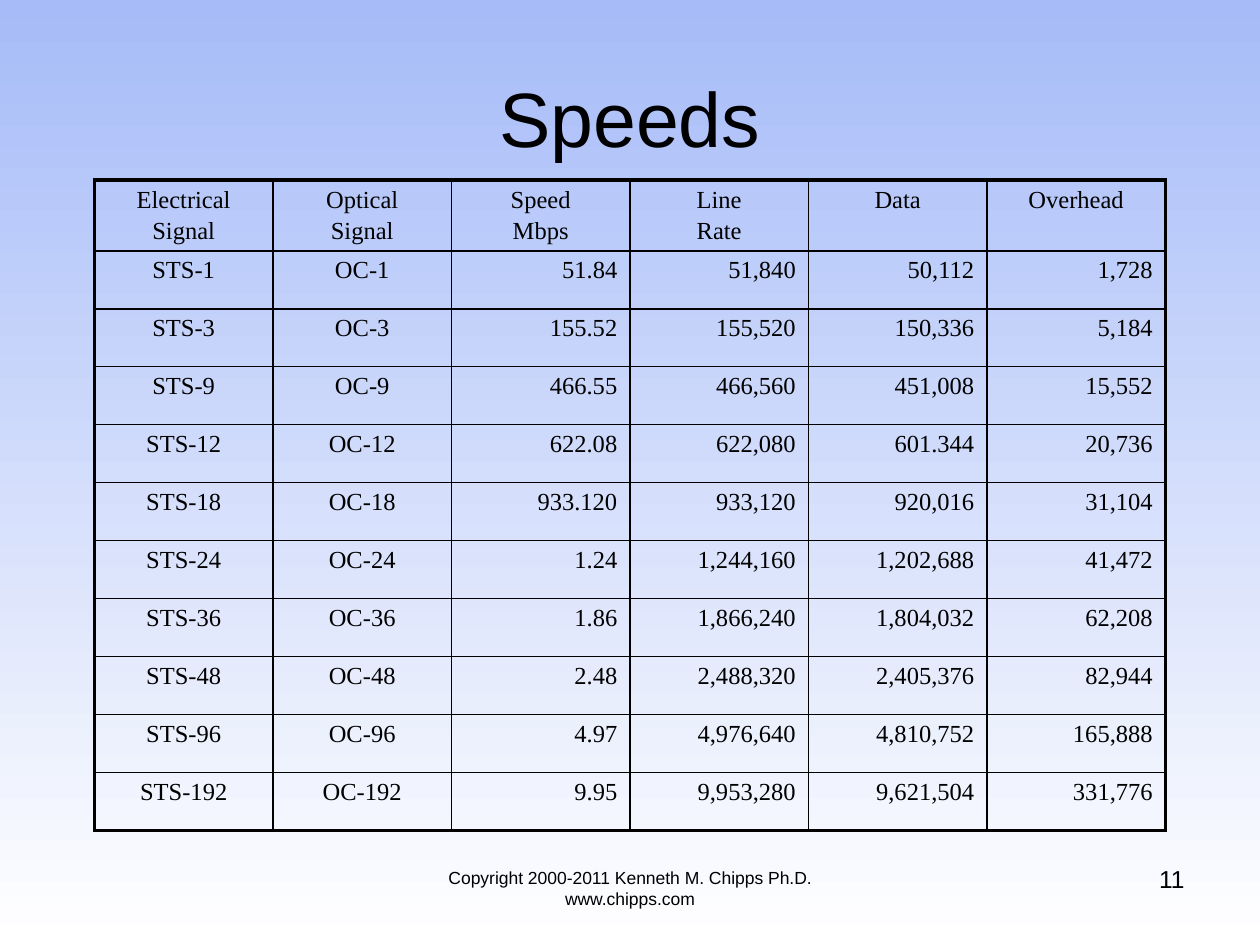
from dataclasses import dataclass

from lxml import etree
from pptx import Presentation
from pptx.dml.color import RGBColor
from pptx.enum import text
from pptx.oxml.ns import qn
from pptx.util import Inches, Pt

CENTER, RIGHT = text.PP_ALIGN.CENTER, text.PP_ALIGN.RIGHT


@dataclass(frozen=True)
class Theme:
    ink: str = "000000"
    sky: str = "A6BBF8"
    white: str = "FFFFFF"
    sans: str = "Arial"
    serif: str = "Times New Roman"
    title: float = 44
    body: float = 14
    footer: float = 10
    cell_gap: float = 2.2
    outer_line: float = 2.25
    inner_line: float = 1


@dataclass(frozen=True)
class Label:
    words: str
    left: float
    top: float
    width: float
    height: float
    size: float
    align: text.PP_ALIGN
    anchor: text.MSO_ANCHOR = text.MSO_ANCHOR.TOP


THEME = Theme()

LABELS = [
    Label("Speeds", 0.5, 0.3, 9, 1.25, THEME.title, CENTER, text.MSO_ANCHOR.MIDDLE),
    Label("Copyright 2000-2011 Kenneth M. Chipps Ph.D. www.chipps.com",
          3, 6.83, 4, 0.52, THEME.footer, CENTER),
    Label("11", 7.17, 6.81, 2.33, 0.52, THEME.body, RIGHT),
]

HEADERS = ["Electrical\nSignal", "Optical\nSignal", "Speed\nMbps",
           "Line\nRate", "Data", "Overhead"]

# Signal level, speed, line rate, data, overhead
SPEEDS = [
    (1, "51.84", "51,840", "50,112", "1,728"),
    (3, "155.52", "155,520", "150,336", "5,184"),
    (9, "466.55", "466,560", "451,008", "15,552"),
    (12, "622.08", "622,080", "601.344", "20,736"),
    (18, "933.120", "933,120", "920,016", "31,104"),
    (24, "1.24", "1,244,160", "1,202,688", "41,472"),
    (36, "1.86", "1,866,240", "1,804,032", "62,208"),
    (48, "2.48", "2,488,320", "2,405,376", "82,944"),
    (96, "4.97", "4,976,640", "4,810,752", "165,888"),
    (192, "9.95", "9,953,280", "9,621,504", "331,776"),
]
SIGNAL_COLUMNS = 2


def style_paragraph(p, font: str, size: float, align: text.PP_ALIGN) -> None:
    p.alignment = align
    p.font.name = font
    p.font.size = Pt(size)
    p.font.color.rgb = RGBColor.from_string(THEME.ink)


def paint_background(slide) -> None:
    fill = slide.background.fill
    fill.gradient()
    fill.gradient_angle = 270
    for stop, color in zip(fill.gradient_stops, (THEME.sky, THEME.white)):
        stop.color.rgb = RGBColor.from_string(color)


def add_label(slide, label: Label) -> None:
    box = slide.shapes.add_textbox(Inches(label.left), Inches(label.top),
                                   Inches(label.width), Inches(label.height))
    tf = box.text_frame
    tf.word_wrap = True
    tf.vertical_anchor = label.anchor
    tf.text = label.words
    style_paragraph(tf.paragraphs[0], THEME.sans, label.size, label.align)


def set_borders(cell, outer_sides: dict[str, bool]) -> None:
    """Draw each side of a cell, heavier where it lies on the table's edge."""
    tc_pr = cell._tc.get_or_add_tcPr()
    for side, is_outer in outer_sides.items():
        width = THEME.outer_line if is_outer else THEME.inner_line
        line = etree.SubElement(tc_pr, qn(f"a:ln{side}"), w=str(Pt(width)))
        fill = etree.SubElement(line, qn("a:solidFill"))
        etree.SubElement(fill, qn("a:srgbClr"), val=THEME.ink)


def add_speed_table(slide) -> None:
    rows = [HEADERS] + [[f"STS-{level}", f"OC-{level}", *values]
                        for level, *values in SPEEDS]
    last_row, last_col = len(rows) - 1, len(HEADERS) - 1
    row_height = Inches(0.46)
    frame = slide.shapes.add_table(len(rows), len(HEADERS), Inches(0.75), Inches(1.43),
                                   Inches(8.5), row_height * len(rows))
    table = frame.table
    table.first_row = table.horz_banding = False

    for r, row in enumerate(rows):
        table.rows[r].height = row_height
        for c, words in enumerate(row):
            cell = table.cell(r, c)
            cell.text = words
            align = CENTER if r == 0 or c < SIGNAL_COLUMNS else RIGHT
            for p in cell.text_frame.paragraphs:
                style_paragraph(p, THEME.serif, THEME.body, align)
                p.space_before = Pt(THEME.cell_gap)
            set_borders(cell, {"L": c == 0, "R": c == last_col,
                               "T": r == 0, "B": r == last_row})
            cell.fill.background()


def main() -> None:
    prs = Presentation()
    prs.slide_width, prs.slide_height = Inches(10), Inches(7.5)
    slide = prs.slides.add_slide(prs.slide_layouts[6])
    paint_background(slide)
    add_speed_table(slide)
    for label in LABELS:
        add_label(slide, label)
    prs.save("out.pptx")


if __name__ == "__main__":
    main()
